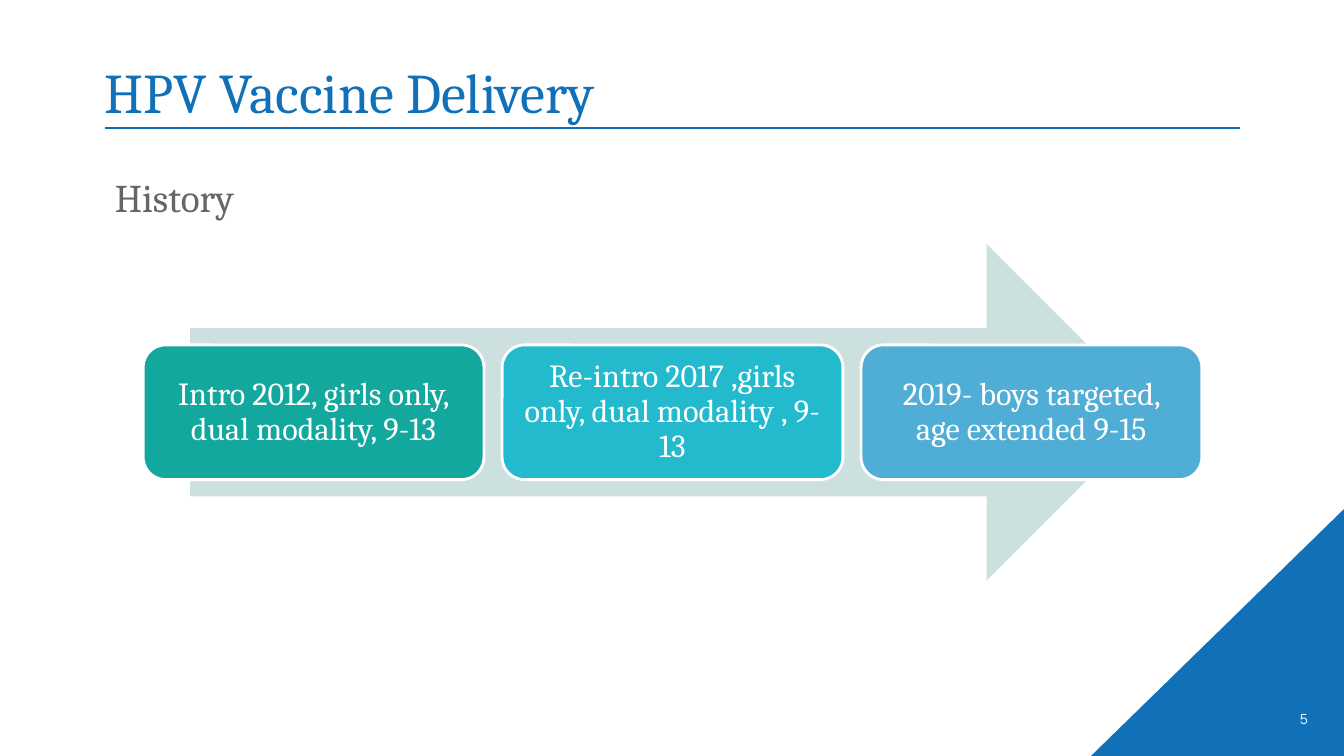
import pptx
import pptx.util
import pptx.dml.color
import pptx.enum.shapes
import pptx.enum.text
import pptx.oxml.ns
import lxml.etree

Inches = pptx.util.Inches
Pt = pptx.util.Pt
Shape = pptx.enum.shapes.MSO_SHAPE
Align = pptx.enum.text.PP_ALIGN
Anchor = pptx.enum.text.MSO_ANCHOR

COLOURS = {
    "blue": "1070B8",
    "rule": "0C6EB8",
    "grey": "666666",
    "white": "FFFFFF",
    "arrow": "CCE1DF",
    "teal": "13A89E",
    "cyan": "23BACD",
    "sky": "50AED6",
}
STEPS = [
    ("Intro 2012, girls only, dual modality, 9-13", "teal"),
    ("Re-intro 2017 ,girls only, dual modality , 9-13", "cyan"),
    ("2019- boys targeted, age extended 9-15", "sky"),
]


def colour(name):
    """Return the named colour."""
    return pptx.dml.color.RGBColor.from_string(COLOURS[name])


def place(shape, left, top, width, height):
    """Move and size a shape, in inches."""
    shape.left, shape.top = Inches(left), Inches(top)
    shape.width, shape.height = Inches(width), Inches(height)


def write(shape, text, size, ink, align, anchor, insets, font="Cambria"):
    """Write one formatted paragraph into a shape and return it."""
    frame = shape.text_frame
    frame.text = text
    frame.word_wrap = True
    frame.auto_size = pptx.enum.text.MSO_AUTO_SIZE.NONE
    frame.vertical_anchor = anchor
    (frame.margin_left, frame.margin_top,
     frame.margin_right, frame.margin_bottom) = map(Inches, insets)
    para = frame.paragraphs[0]
    para.alignment = align
    span = para.runs[0]
    span.font.name = font
    span.font.size = Pt(size)
    span.font.color.rgb = colour(ink)
    return para


def add_block(page, kind, left, top, width, height, fill):
    """Add a flat filled shape without an outline."""
    block = page.shapes.add_shape(
        kind, Inches(left), Inches(top), Inches(width), Inches(height))
    block.shadow.inherit = False
    block.fill.solid()
    block.fill.fore_color.rgb = colour(fill)
    block.line.fill.background()
    return block


def add_corner(page, left, top, width, height):
    """Draw the corner triangle and the page number on it."""
    corner = add_block(page, Shape.ISOSCELES_TRIANGLE, left, top, width, height, "blue")
    corner.adjustments[0] = 1
    number = page.shapes.add_textbox(
        Inches(left - 0.86), Inches(top + 1.88), Inches(3.11), Inches(0.4))
    write(number, "5", 10, "white", Align.RIGHT, Anchor.MIDDLE,
          (0.1, 0.05, 0.1, 0.05), "Manrope")


def add_heading(page, left, top, width, height):
    """Fill the title and draw the rule under it."""
    title = page.shapes.title
    place(title, left, top, width, height)
    write(title, "HPV Vaccine Delivery", 40, "blue", Align.LEFT, Anchor.BOTTOM,
          (0, 0.05, 0.1, 0))
    level = Inches(top + height + 0.03)
    rule = page.shapes.add_connector(
        pptx.enum.shapes.MSO_CONNECTOR.STRAIGHT,
        Inches(left), level, Inches(left + width), level)
    rule.line.color.rgb = colour("rule")
    rule.line.width = Pt(1)
    lxml.etree.SubElement(rule._element.spPr, pptx.oxml.ns.qn("a:effectLst"))


def add_subheading(page, left, top, width, height):
    """Fill the body placeholder with an unbulleted subheading."""
    body = page.placeholders[1]
    place(body, left, top, width, height)
    para = write(body, "History", 28, "grey", Align.LEFT, Anchor.TOP,
                 (0.1, 0.05, 0.1, 0.05))
    para.space_before = Pt(0)
    properties = para._p.get_or_add_pPr()
    properties.set("marL", "0")
    properties.set("indent", "0")
    lxml.etree.SubElement(properties, pptx.oxml.ns.qn("a:buNone"))


def add_timeline(page, left, top, width, height):
    """Draw the arrow with evenly spaced steps across its middle."""
    arrow_width = 9.57
    add_block(page, Shape.RIGHT_ARROW, left + (width - arrow_width) / 2, top,
              arrow_width, height, "arrow")
    gap = 0.18
    step_width = (width - gap * (len(STEPS) - 1)) / len(STEPS)
    step_height = height * 0.4
    for index, (text, fill) in enumerate(STEPS):
        step = add_block(page, Shape.ROUNDED_RECTANGLE,
                         left + index * (step_width + gap),
                         top + (height - step_height) / 2,
                         step_width, step_height, fill)
        step.line.color.rgb = colour("white")
        step.line.width = Pt(2)
        para = write(step, text, 23, "white", Align.CENTER, Anchor.MIDDLE, (0.1,) * 4)
        para.line_spacing = 0.9


def main():
    """Build the deck and save it."""
    deck = pptx.Presentation()
    deck.slide_width, deck.slide_height = Inches(13.33), Inches(7.5)
    page = deck.slides.add_slide(deck.slide_layouts[1])
    add_corner(page, 10.82, 5.05, 2.51, 2.45)
    add_heading(page, 1.04, 0.27, 11.26, 0.97)
    add_subheading(page, 1.04, 1.67, 11.26, 0.67)
    add_timeline(page, 1.42, 2.42, 10.5, 3.34)
    deck.save("out.pptx")


if __name__ == "__main__":
    main()
